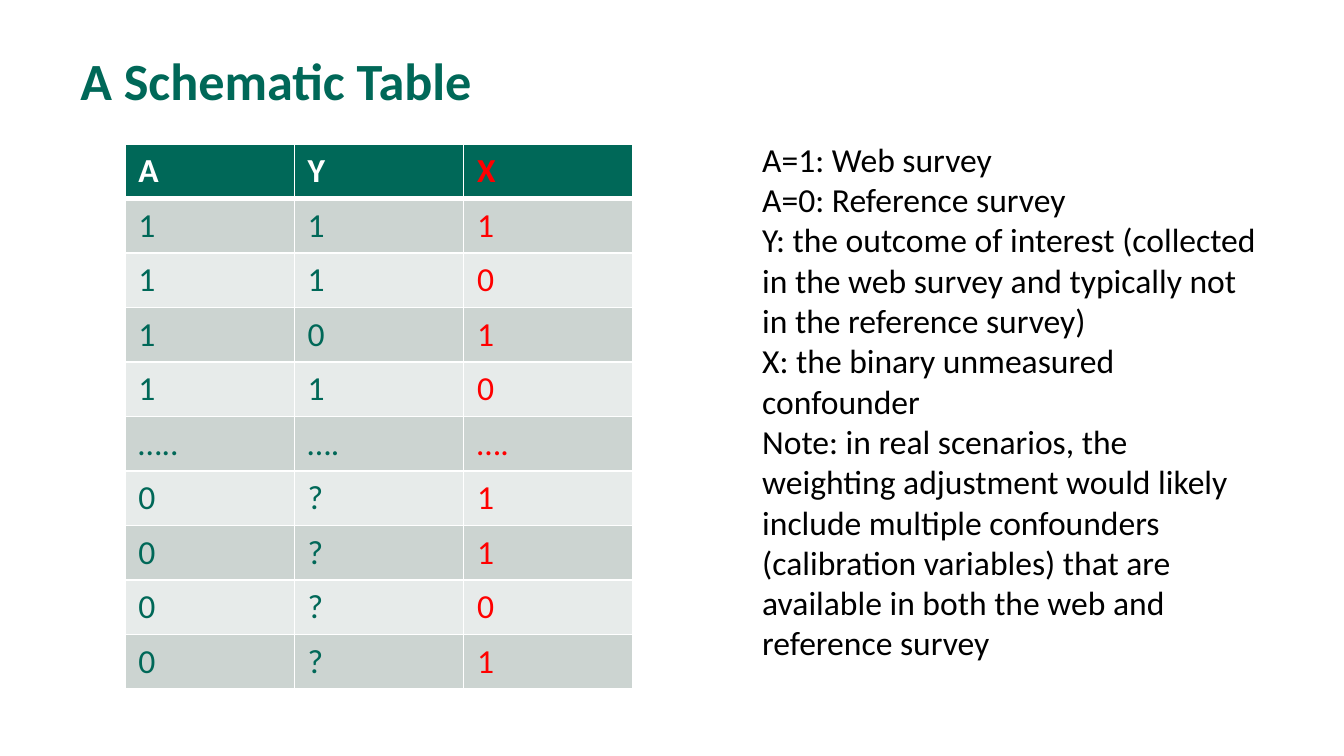
from lxml.etree import SubElement
from pptx import Presentation
from pptx.dml.color import RGBColor
from pptx.enum.text import MSO_ANCHOR, MSO_AUTO_SIZE, PP_ALIGN
from pptx.oxml.ns import qn
from pptx.util import Emu, Pt

SCALE = 914400 / 134.4
GREEN = "006858"
RED = "FF0000"
WHITE = "FFFFFF"
BANDS = ["CCD4D1", "E7EBEA"]


def px(length):
    return Emu(round(length * SCALE))


def add_run(paragraph, text, size, color, bold=False):
    run = paragraph.add_run()
    run.text = text
    run.font.name = "Calibri"
    run.font.size = Pt(size)
    run.font.bold = bold
    run.font.color.rgb = RGBColor.from_string(color)


presentation = Presentation()
presentation.slide_width = px(1344)
presentation.slide_height = px(756)
slide = presentation.slides.add_slide(presentation.slide_layouts[5])

title = slide.shapes.title
title.left, title.top, title.width, title.height = px(67), px(-8), px(1210), px(126)
title.text_frame.auto_size = MSO_AUTO_SIZE.NONE
title.text_frame.vertical_anchor = MSO_ANCHOR.BOTTOM
paragraph = title.text_frame.paragraphs[0]
paragraph.alignment = PP_ALIGN.LEFT
paragraph.line_spacing = Pt(30)
add_run(paragraph, "A Schematic Table", 28, GREEN, True)

rows = [
    ["A", "Y", "X"],
    ["1", "1", "1"],
    ["1", "1", "0"],
    ["1", "0", "1"],
    ["1", "1", "0"],
    ["…..", "….", "…."],
    ["0", "?", "1"],
    ["0", "?", "1"],
    ["0", "?", "0"],
    ["0", "?", "1"],
]
table = slide.shapes.add_table(
    len(rows), len(rows[0]), px(125), px(144), px(508), px(543)
).table

for row_index, row in enumerate(rows):
    header = row_index == 0
    fill_color = GREEN if header else BANDS[(row_index - 1) % 2]
    for column_index, text in enumerate(row):
        cell = table.cell(row_index, column_index)
        text_color = RED if column_index == 2 else WHITE if header else GREEN
        add_run(cell.text_frame.paragraphs[0], text, 18, text_color, header)
        properties = cell._tc.get_or_add_tcPr()
        for side in ["lnL", "lnR", "lnT", "lnB"]:
            thick = (row_index, side) in [(0, "lnB"), (1, "lnT")]
            line = SubElement(properties, qn(f"a:{side}"), w=str(Pt(3 if thick else 1)))
            line_fill = SubElement(line, qn("a:solidFill"))
            SubElement(line_fill, qn("a:srgbClr"), val=WHITE)
        cell.fill.solid()
        cell.fill.fore_color.rgb = RGBColor.from_string(fill_color)

legend = [
    "A=1: Web survey",
    "A=0: Reference survey",
    "Y: the outcome of interest (collected in the web survey and typically not in the reference survey)",
    "X: the binary unmeasured confounder",
    "Note: in real scenarios, the weighting adjustment would likely include multiple confounders (calibration variables) that are available in both the web and reference survey",
]
legend_frame = slide.shapes.add_textbox(px(749), px(132), px(528), px(543)).text_frame
legend_frame.word_wrap = True
legend_frame.auto_size = MSO_AUTO_SIZE.SHAPE_TO_FIT_TEXT
for index, text in enumerate(legend):
    paragraph = legend_frame.add_paragraph() if index else legend_frame.paragraphs[0]
    add_run(paragraph, text, 18, "000000")

presentation.save("out.pptx")
